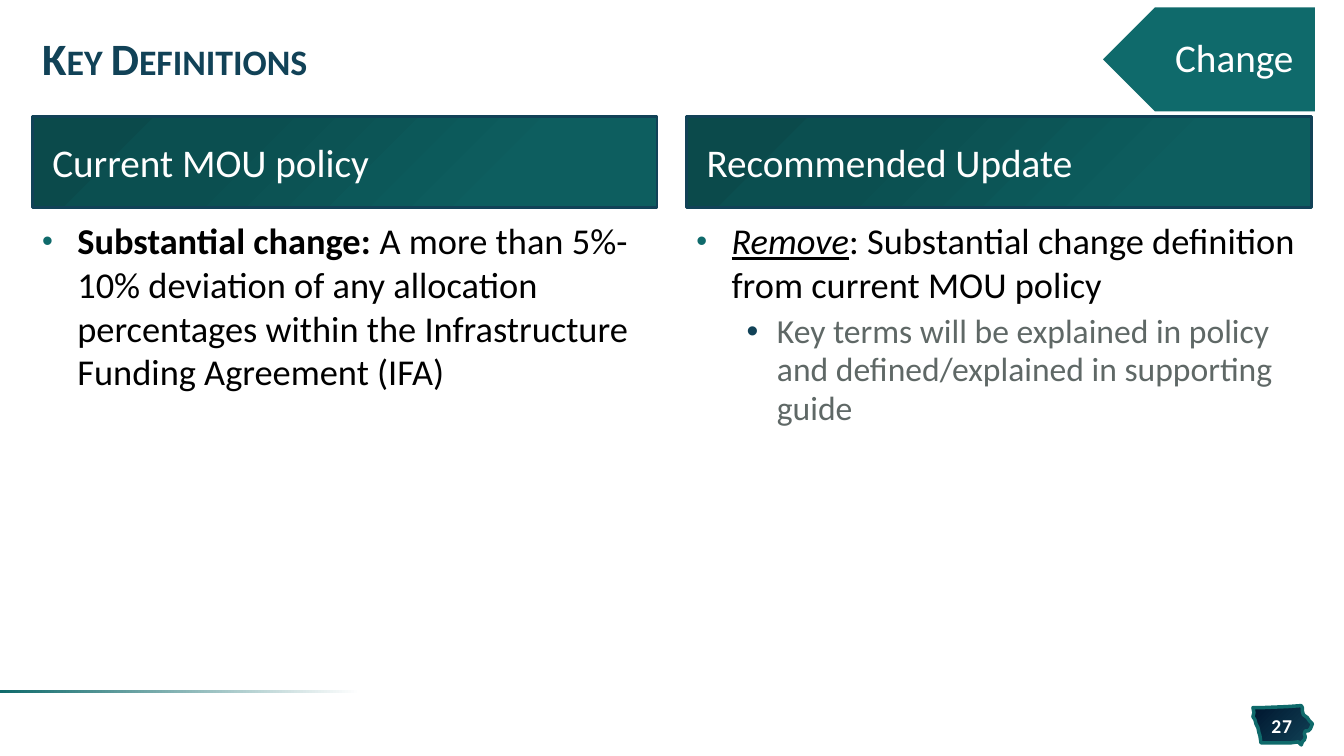
from dataclasses import dataclass

from lxml import etree
from pptx import Presentation
from pptx.dml.color import RGBColor
from pptx.enum.shapes import MSO_SHAPE
from pptx.enum.text import MSO_ANCHOR, PP_ALIGN
from pptx.oxml.ns import qn
from pptx.util import Pt

RECTANGLE, PENTAGON = MSO_SHAPE.RECTANGLE, MSO_SHAPE.PENTAGON
MIDDLE, TOP = MSO_ANCHOR.MIDDLE, MSO_ANCHOR.TOP
LEFT, CENTER = PP_ALIGN.LEFT, PP_ALIGN.CENTER

FONT = "Calibri"
COLORS = {
    "navy": "114257", "midnight": "00162E", "teal": "0F6A6B",
    "header_light": "0D5E5F", "header_mid": "0B4F50", "header_dark": "0B4A4B",
    "white": "FFFFFF", "black": "000000", "gray": "5F6866",
}

# State outline for the page badge, in hundredths of an inch
BADGE_UNIT = Pt(0.72)
BADGE_OUTLINE = [
    (1291, 700), (1277, 701), (1253, 702), (1243, 702), (1244, 707), (1243, 711),
    (1245, 714), (1246, 718), (1248, 722), (1249, 727), (1250, 730), (1251, 737),
    (1280, 737), (1288, 736), (1291, 739), (1292, 736), (1294, 734), (1295, 731),
    (1294, 728), (1295, 725), (1298, 725), (1300, 723), (1302, 718), (1299, 715),
    (1297, 712), (1293, 709), (1292, 705), (1292, 702),
]


@dataclass
class Box:
    left: float
    top: float
    width: float
    height: float

    def lengths(self) -> list:
        return [Pt(self.left), Pt(self.top), Pt(self.width), Pt(self.height)]


@dataclass
class Run:
    text: str
    bold: bool = False
    italic: bool = False
    underline: bool = False


@dataclass
class Bullet:
    color: str
    margin: float
    hang: float
    percent: int = 100


@dataclass
class Line:
    runs: list[Run]
    size: float
    color: str
    align: PP_ALIGN = LEFT
    spacing: float = 1.0
    before: float = 0
    bullet: Bullet | None = None


@dataclass
class Column:
    left: float
    heading: str
    lines: list[Line]


def rgb(name: str) -> RGBColor:
    return RGBColor.from_string(COLORS[name])


def set_gradient(shape, stops: list[tuple[int, str]], angle: int | None = None) -> None:
    """Linear at the given angle, or radial from the lower right corner."""
    shape.fill.gradient()
    gradient = shape._element.spPr.find(qn("a:gradFill"))
    gradient.clear()
    stop_list = etree.SubElement(gradient, qn("a:gsLst"))
    for position, color in stops:
        stop = etree.SubElement(stop_list, qn("a:gs"), pos=str(position * 1000))
        etree.SubElement(stop, qn("a:srgbClr"), val=COLORS[color])
    if angle is not None:
        etree.SubElement(gradient, qn("a:lin"), ang=str(angle * 60000), scaled="0")
    else:
        radial = etree.SubElement(gradient, qn("a:path"), path="circle")
        etree.SubElement(radial, qn("a:fillToRect"), l="100000", t="100000")


def set_outline(shape, color: str | None = None, width: float = 0) -> None:
    shape.shadow.inherit = False
    if color is None:
        shape.line.fill.background()
    else:
        shape.line.color.rgb = rgb(color)
        shape.line.width = Pt(width)


def add_bullet(paragraph, bullet: Bullet) -> None:
    properties = paragraph._p.get_or_add_pPr()
    properties.set("marL", str(Pt(bullet.margin)))
    properties.set("indent", str(-Pt(bullet.hang)))
    color = etree.SubElement(properties, qn("a:buClr"))
    etree.SubElement(color, qn("a:srgbClr"), val=COLORS[bullet.color])
    etree.SubElement(properties, qn("a:buSzPct"), val=str(bullet.percent * 1000))
    etree.SubElement(properties, qn("a:buFont"), typeface="Arial")
    etree.SubElement(properties, qn("a:buChar"), char="•")


def write_text(shape, lines: list[Line], anchor: MSO_ANCHOR = MIDDLE,
               insets: tuple = (7.2, 3.6, 7.2, 3.6)) -> None:
    frame = shape.text_frame
    frame.word_wrap = True
    frame.vertical_anchor = anchor
    frame.margin_left, frame.margin_top, frame.margin_right, frame.margin_bottom = map(Pt, insets)
    for index, line in enumerate(lines):
        paragraph = frame.add_paragraph() if index else frame.paragraphs[0]
        if line.bullet:
            add_bullet(paragraph, line.bullet)
        paragraph.alignment = line.align
        paragraph.line_spacing = line.spacing
        if index:
            paragraph.space_before = Pt(line.before)
        paragraph.font.name = FONT
        paragraph.font.size = Pt(line.size)
        paragraph.font.color.rgb = rgb(line.color)
        for part in line.runs:
            run = paragraph.add_run()
            run.text = part.text
            run.font.bold = part.bold
            run.font.italic = part.italic
            run.font.underline = part.underline


def add_text(slide, box: Box, lines: list[Line], **layout):
    shape = slide.shapes.add_textbox(*box.lengths())
    write_text(shape, lines, **layout)
    return shape


def add_column(slide, column: Column) -> None:
    header = slide.shapes.add_shape(RECTANGLE, *Box(column.left, 83.5, 446.4, 64.8).lengths())
    set_gradient(header, [(0, "header_light"), (23, "header_light"),
                          (69, "header_mid"), (97, "header_dark")])
    set_outline(header, "navy", 2)
    write_text(header, [Line([Run(column.heading)], 28, "white")], insets=(14.4, 0, 14.4, 0))
    add_text(slide, Box(column.left, 152.6, 446.4, 334.8), column.lines, anchor=TOP)


def main() -> None:
    presentation = Presentation()
    presentation.slide_width, presentation.slide_height = Pt(960), Pt(540)
    slide = presentation.slides.add_slide(presentation.slide_layouts[6])

    # Page badge and footer rule
    builder = slide.shapes.build_freeform(*BADGE_OUTLINE[0], scale=BADGE_UNIT)
    builder.add_line_segments(BADGE_OUTLINE[1:], close=True)
    badge = builder.convert_to_shape()
    set_gradient(badge, [(0, "midnight"), (100, "navy")], 45)
    set_outline(badge, "teal", 2.5)
    rule = slide.shapes.add_shape(RECTANGLE, *Box(0, 493.2, 273.6, 2.16).lengths())
    set_gradient(rule, [(6, "white"), (100, "teal")], 180)
    set_outline(rule)

    # Title in small capitals
    title = add_text(slide, Box(23, 17.3, 913.7, 54),
                     [Line([Run("Key Definitions", bold=True)], 32, "navy", spacing=0.85)])
    title.text_frame.paragraphs[0].runs[0]._r.get_or_add_rPr().set("cap", "small")

    # Two columns
    main_bullet = Bullet("teal", 25.2, 25.2, 85)
    columns = [
        Column(23, "Current MOU policy", [
            Line([Run("Substantial change:", bold=True),
                  Run(" A more than 5%-10% deviation of any allocation percentages "
                      "within the Infrastructure Funding Agreement (IFA)")],
                 26, "black", bullet=main_bullet)]),
        Column(490.3, "Recommended Update", [
            Line([Run("Remove", italic=True, underline=True),
                  Run(": Substantial change definition from current MOU policy")],
                 26, "black", bullet=main_bullet),
            Line([Run("Key terms will be explained in policy and defined/explained "
                      "in supporting guide")],
                 24, "gray", spacing=0.95, before=5, bullet=Bullet("navy", 57.6, 21.6))]),
    ]
    for column in columns:
        add_column(slide, column)

    # Change tag
    tag = slide.shapes.add_shape(PENTAGON, *Box(786.2, 4.3, 154.1, 76.3).lengths())
    tag.rotation = 180
    tag.fill.solid()
    tag.fill.fore_color.rgb = rgb("teal")
    set_outline(tag, "white", 2)
    add_text(slide, Box(805, 4.3, 135.3, 76.3),
             [Line([Run("Change")], 28, "white", CENTER, 0.9)], insets=(33.8, 8.6, 15.8, 8.6))

    # Page number
    number = add_text(slide, Box(897.1, 509.8, 36.7, 16.6),
                      [Line([Run("27", bold=True)], 14, "white", CENTER)], insets=(0, 3.6, 0, 3.6))
    number.text_frame.paragraphs[0].runs[0]._r.get_or_add_rPr().set("spc", "50")

    presentation.save("out.pptx")


if __name__ == "__main__":
    main()
